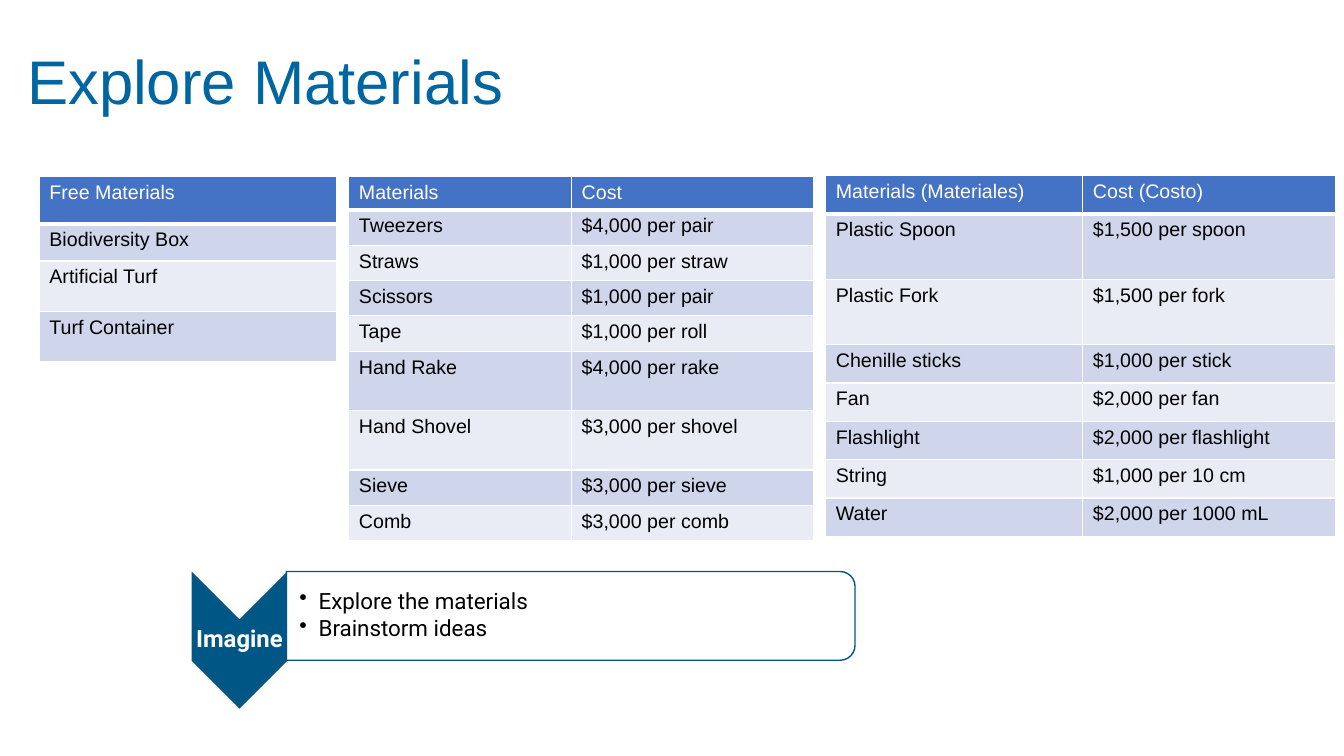
import pptx
import pptx.util
import pptx.dml.color
import pptx.enum.shapes
import pptx.enum.text
import pptx.oxml
import pptx.oxml.ns

# Content
TITLE = "Explore Materials"
STEP = "Imagine"
TASKS = ["Explore the materials", "Brainstorm ideas"]
TABLES = [
    {"at": (39, 175), "cols": [295], "rows": [47, 37, 50, 50],
     "data": [["Free Materials"], ["Biodiversity Box"],
              ["Artificial Turf"], ["Turf Container"]]},
    {"at": (346, 175), "cols": [221, 240],
     "rows": [31] + [35] * 4 + [59] * 2 + [35] * 2,
     "data": [["Materials", "Cost"],
              ["Tweezers", "$4,000 per pair"],
              ["Straws", "$1,000 per straw"],
              ["Scissors", "$1,000 per pair"],
              ["Tape", "$1,000 per roll"],
              ["Hand Rake", "$4,000 per rake"],
              ["Hand Shovel", "$3,000 per shovel"],
              ["Sieve", "$3,000 per sieve"],
              ["Comb", "$3,000 per comb"]]},
    {"at": (819, 174), "cols": [255, 251],
     "rows": [38] + [65] * 2 + [38] * 5,
     "data": [["Materials (Materiales)", "Cost (Costo)"],
              ["Plastic Spoon", "$1,500 per spoon"],
              ["Plastic Fork", "$1,500 per fork"],
              ["Chenille sticks", "$1,000 per stick"],
              ["Fan", "$2,000 per fan"],
              ["Flashlight", "$2,000 per flashlight"],
              ["String", "$1,000 per 10 cm"],
              ["Water", "$2,000 per 1000 mL"]]},
]

# Formats
HUES = {"title": "0066A1", "step": "005786", "head": "4472C4",
        "odd": "CFD5EA", "even": "E9EBF5", "white": "FFFFFF",
        "black": "000000"}
PX = 9144  # 100 px to the inch
Pt = pptx.util.Pt
KIND = pptx.enum.shapes.MSO_SHAPE
MID = pptx.enum.text.MSO_ANCHOR.MIDDLE
ALIGN = pptx.enum.text.PP_ALIGN
FONTS = {
    "title": {"name": "Arial", "size": Pt(44), "bold": False},
    "cell": {"name": "Arial", "size": Pt(14), "bold": False},
    "step": {"name": "Roboto", "size": Pt(17), "bold": True},
    "task": {"name": "Roboto", "size": Pt(16), "bold": False},
}


def px(*vals):
    return [v * PX for v in vals]


def rgb(hue):
    return pptx.dml.color.RGBColor.from_string(HUES[hue])


def put(obj, vals):
    for key, val in vals.items():
        setattr(obj, key, val)


def paint(fill, hue):
    fill.solid()
    fill.fore_color.rgb = rgb(hue)


def xml(tag, attrs="", body=""):
    space = pptx.oxml.ns.nsdecls("a")
    return pptx.oxml.parse_xml(f"<a:{tag} {space} {attrs}>{body}</a:{tag}>")


def write(para, text, font, hue, form):
    put(para, form)
    run = para.add_run()
    run.text = text
    put(run.font, FONTS[font])
    run.font.color.rgb = rgb(hue)


def frame(box, left, edge):
    put(box, {"word_wrap": True, "vertical_anchor": MID,
              "margin_left": left * PX, "margin_top": edge * PX,
              "margin_right": edge * PX, "margin_bottom": edge * PX})


def turned(shapes, kind, x, y, w, h):
    """Add a shape turned by 90 degrees that fills the given area."""
    mid_x, mid_y = x + w / 2, y + h / 2
    spot = [int(v) for v in px(mid_x - h / 2, mid_y - w / 2, h, w)]
    shape = shapes.add_shape(kind, *spot)
    shape.rotation = 90
    shape.shadow.inherit = False
    return shape


def border(cell, head):
    props = cell._tc.get_or_add_tcPr()
    for side in "LRTB":
        wide = Pt(3 if head and side == "B" else 1)
        props.append(xml(f"ln{side}", f'w="{wide}"',
                         f'<a:solidFill><a:srgbClr val="{HUES["white"]}"/>'
                         '</a:solidFill>'))


def grid(shapes, spec_):
    cols, rows = spec_["cols"], spec_["rows"]
    spot = px(*spec_["at"], sum(cols), sum(rows))
    table = shapes.add_table(len(rows), len(cols), *spot).table
    for col, wide in zip(table.columns, cols):
        col.width = wide * PX
    for r, (line, high) in enumerate(zip(spec_["data"], rows)):
        table.rows[r].height = high * PX
        for c, text in enumerate(line):
            cell = table.cell(r, c)
            border(cell, r == 0)
            paint(cell.fill, "head" if r == 0 else "odd" if r % 2 else "even")
            write(cell.text_frame.paragraphs[0], text, "cell",
                  "black" if r else "white", {"alignment": ALIGN.LEFT})


def main():
    deck = pptx.Presentation()
    put(deck, {"slide_width": 1333 * PX, "slide_height": 750 * PX})
    slide = deck.slides.add_slide(deck.slide_layouts[5])
    shapes = slide.shapes

    # Title
    title = shapes.title
    put(title, dict(zip(("left", "top", "width", "height"),
                        px(17, 11, 1150, 145))))
    frame(title.text_frame, 10, 5)
    title.text_frame.auto_size = pptx.enum.text.MSO_AUTO_SIZE.NONE
    write(title.text_frame.paragraphs[0], TITLE, "title", "title",
          {"alignment": ALIGN.LEFT, "line_spacing": 0.9})

    # Step arrow
    arrow = turned(shapes, KIND.CHEVRON, 190, 567, 95, 136)
    paint(arrow.fill, "step")
    arrow.line.fill.background()
    label = shapes.add_textbox(*px(190, 614, 95, 41)).text_frame
    frame(label, 1, 1)
    write(label.paragraphs[0], STEP, "step", "white",
          {"alignment": ALIGN.CENTER, "line_spacing": 0.9,
           "space_after": Pt(6)})

    # Task panel
    panel = turned(shapes, KIND.ROUND_2_SAME_RECTANGLE, 284, 567, 564, 88)
    paint(panel.fill, "white")
    tint = panel.fill._xPr.find(".//" + pptx.oxml.ns.qn("a:srgbClr"))
    tint.append(xml("alpha", 'val="90000"'))
    panel.line.color.rgb = rgb("step")
    panel.line.width = Pt(1)
    tasks = shapes.add_textbox(*px(285, 571, 559, 80)).text_frame
    frame(tasks, 12, 1)
    for i, text in enumerate(TASKS):
        para = tasks.add_paragraph() if i else tasks.paragraphs[0]
        props = para._p.get_or_add_pPr()
        props.set("marL", str(19 * PX))
        props.set("indent", str(-19 * PX))
        props.append(xml("buChar", 'char="•"'))
        write(para, text, "task", "black",
              {"line_spacing": 0.9, "space_after": Pt(2.4)})

    # Price tables
    for plan in TABLES:
        grid(shapes, plan)

    deck.save("out.pptx")


if __name__ == "__main__":
    main()
